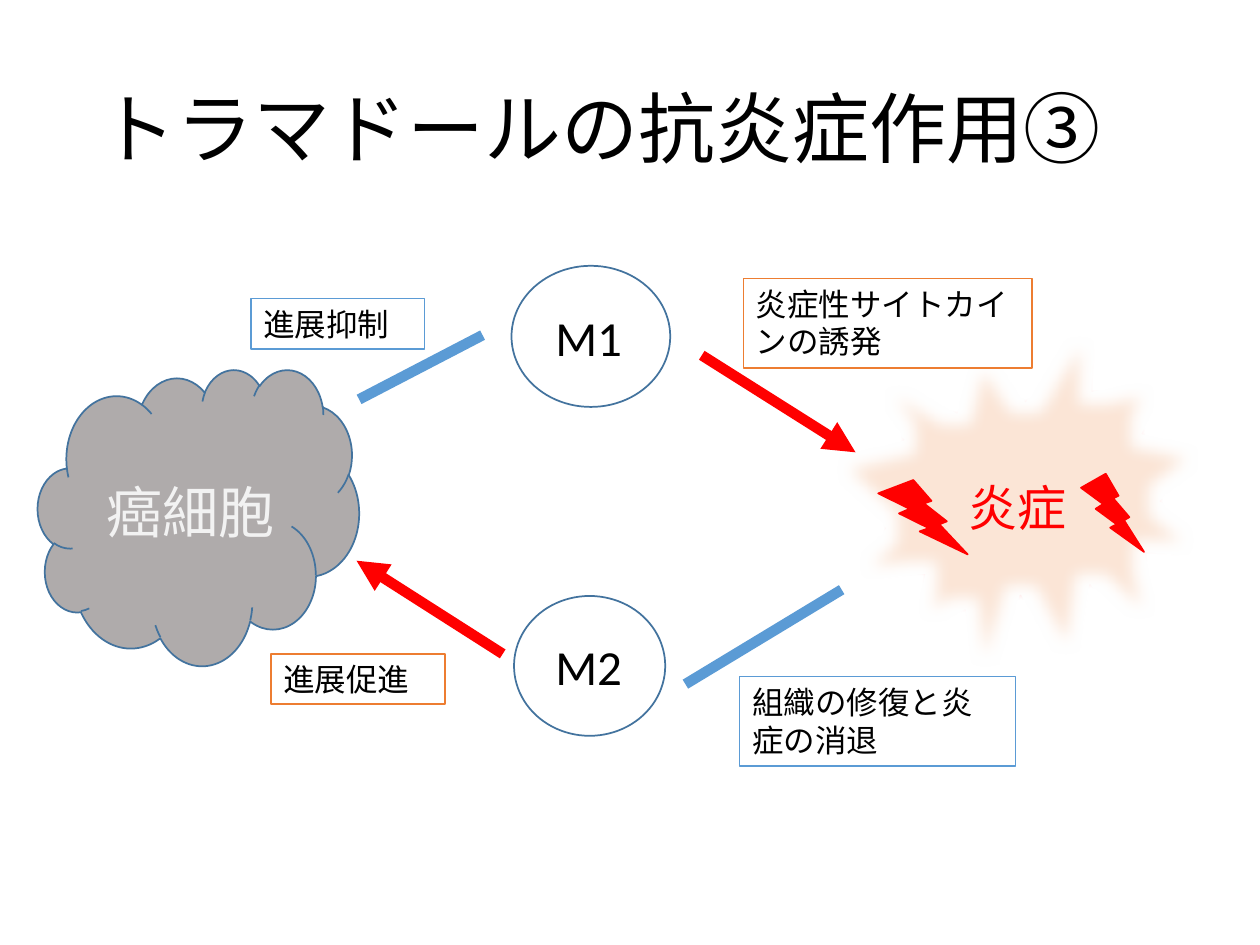
from dataclasses import dataclass
from typing import Optional

from lxml.etree import SubElement
from pptx import Presentation
from pptx.dml.color import RGBColor
from pptx.enum.shapes import MSO_CONNECTOR, MSO_SHAPE
from pptx.enum.text import MSO_ANCHOR, MSO_AUTO_SIZE, PP_ALIGN
from pptx.oxml.ns import qn
from pptx.util import Inches, Pt

BLACK = RGBColor(0x00, 0x00, 0x00)
WHITE = RGBColor(0xFF, 0xFF, 0xFF)
PALE_GRAY = RGBColor(0xF2, 0xF2, 0xF2)
GRAY = RGBColor(0xAF, 0xAB, 0xAB)
RED = RGBColor(0xFF, 0x00, 0x00)
PEACH = RGBColor(0xFB, 0xE5, 0xD6)
ORANGE = RGBColor(0xED, 0x7D, 0x31)
BLUE = RGBColor(0x5B, 0x9B, 0xD5)
DARK_BLUE = RGBColor(0x43, 0x73, 0x9E)
FONT = "Calibri"
SOFT_EDGE = Inches(0.12)


@dataclass(frozen=True)
class Box:
    left: float
    top: float
    width: float
    height: float

    def lengths(self) -> tuple:
        return tuple(Inches(v) for v in (self.left, self.top, self.width, self.height))


@dataclass(frozen=True)
class Figure:
    kind: MSO_SHAPE
    box: Box
    fill: Optional[RGBColor]
    line: RGBColor


@dataclass(frozen=True)
class Caption:
    text: str
    box: Box
    size: int
    color: RGBColor = BLACK


@dataclass(frozen=True)
class EffectLabel:
    text: str
    box: Box
    border: RGBColor


@dataclass(frozen=True)
class Effect:
    start: tuple[float, float]
    end: tuple[float, float]
    promotes: bool


INFLAMMATION = Figure(MSO_SHAPE.EXPLOSION1, Box(6.44, 2.2, 3.39, 3.65), PEACH, RED)
CELLS = (
    Figure(MSO_SHAPE.OVAL, Box(4.06, 2.11, 1.26, 1.12), None, DARK_BLUE),
    Figure(MSO_SHAPE.OVAL, Box(4.08, 4.73, 1.2, 1.11), None, DARK_BLUE),
    Figure(MSO_SHAPE.CLOUD, Box(0.3, 2.93, 2.55, 2.35), GRAY, DARK_BLUE),
)
BOLTS = (
    Figure(MSO_SHAPE.LIGHTNING_BOLT, Box(6.97, 3.81, 0.71, 0.59), RED, RED),
    Figure(MSO_SHAPE.LIGHTNING_BOLT, Box(8.58, 3.76, 0.5, 0.62), RED, RED),
)
EFFECTS = (
    Effect((5.57, 2.82), (6.79, 3.59), True),
    Effect((3.99, 5.19), (2.83, 4.45), True),
    Effect((3.83, 2.66), (2.85, 3.17), False),
    Effect((6.68, 4.68), (5.44, 5.43), False),
)
TITLE = Caption("トラマドールの抗炎症作用③", Box(0.69, 0.4, 9.05, 1.3), 44)
CAPTIONS = (
    Caption("M1", Box(4.31, 2.39, 0.8, 0.57), 28),
    Caption("M2", Box(4.31, 5, 0.8, 0.57), 28),
    Caption("炎症", Box(7.59, 3.74, 1.38, 0.57), 28, RED),
    Caption("癌細胞", Box(0.75, 3.74, 1.78, 0.64), 32, PALE_GRAY),
)
EFFECT_LABELS = (
    EffectLabel("組織の修復と炎症の消退", Box(5.87, 5.37, 2.19, 0.71), BLUE),
    EffectLabel("炎症性サイトカインの誘発", Box(5.9, 2.21, 2.29, 0.71), ORANGE),
    EffectLabel("進展抑制", Box(1.99, 2.37, 1.38, 0.4), BLUE),
    EffectLabel("進展促進", Box(2.15, 5.19, 1.38, 0.4), ORANGE),
)


def write_text(frame, text: str, size: int, color: RGBColor) -> None:
    frame.word_wrap = True
    frame.auto_size = MSO_AUTO_SIZE.SHAPE_TO_FIT_TEXT
    frame.vertical_anchor = MSO_ANCHOR.TOP
    paragraph = frame.paragraphs[0]
    paragraph.alignment = PP_ALIGN.LEFT
    run = paragraph.add_run()
    run.text = text
    run.font.name = FONT
    run.font.size = Pt(size)
    run.font.color.rgb = color


def draw_figure(slide, figure: Figure):
    shape = slide.shapes.add_shape(figure.kind, *figure.box.lengths())
    shape.shadow.inherit = False
    if figure.fill is None:
        shape.fill.background()
    else:
        shape.fill.solid()
        shape.fill.fore_color.rgb = figure.fill
    shape.line.color.rgb = figure.line
    shape.line.width = Pt(1)
    return shape


def soften_edge(shape) -> None:
    effects = shape.element.spPr.find(qn("a:effectLst"))
    SubElement(effects, qn("a:softEdge"), rad=str(SOFT_EDGE))


def draw_caption(slide, caption: Caption):
    frame = slide.shapes.add_textbox(*caption.box.lengths()).text_frame
    write_text(frame, caption.text, caption.size, caption.color)
    return frame


def draw_title(slide, title: Caption) -> None:
    frame = draw_caption(slide, title)
    frame.auto_size = MSO_AUTO_SIZE.NONE
    frame.vertical_anchor = MSO_ANCHOR.MIDDLE
    frame.paragraphs[0].line_spacing = 0.9


def draw_effect_label(slide, label: EffectLabel) -> None:
    shape = draw_figure(slide, Figure(MSO_SHAPE.RECTANGLE, label.box, WHITE, label.border))
    write_text(shape.text_frame, label.text, 18, BLACK)


def draw_effect(slide, effect: Effect) -> None:
    ends = (Inches(v) for v in effect.start + effect.end)
    connector = slide.shapes.add_connector(MSO_CONNECTOR.STRAIGHT, *ends)
    connector.line.color.rgb = RED if effect.promotes else BLUE
    connector.line.width = Pt(6)
    if effect.promotes:
        SubElement(connector.line._get_or_add_ln(), qn("a:tailEnd"), type="triangle")
    SubElement(connector.element.spPr, qn("a:effectLst"))


def main() -> None:
    """Build the slide on tramadol's anti-inflammatory action."""
    presentation = Presentation()
    presentation.slide_width = Inches(10)
    presentation.slide_height = Inches(7.5)
    slide = presentation.slides.add_slide(presentation.slide_layouts[6])

    soften_edge(draw_figure(slide, INFLAMMATION))
    draw_title(slide, TITLE)
    for cell in CELLS:
        draw_figure(slide, cell)
    for effect in EFFECTS:
        draw_effect(slide, effect)
    for caption in CAPTIONS:
        draw_caption(slide, caption)
    for bolt in BOLTS:
        draw_figure(slide, bolt)
    for label in EFFECT_LABELS:
        draw_effect_label(slide, label)

    presentation.save("out.pptx")


if __name__ == "__main__":
    main()
